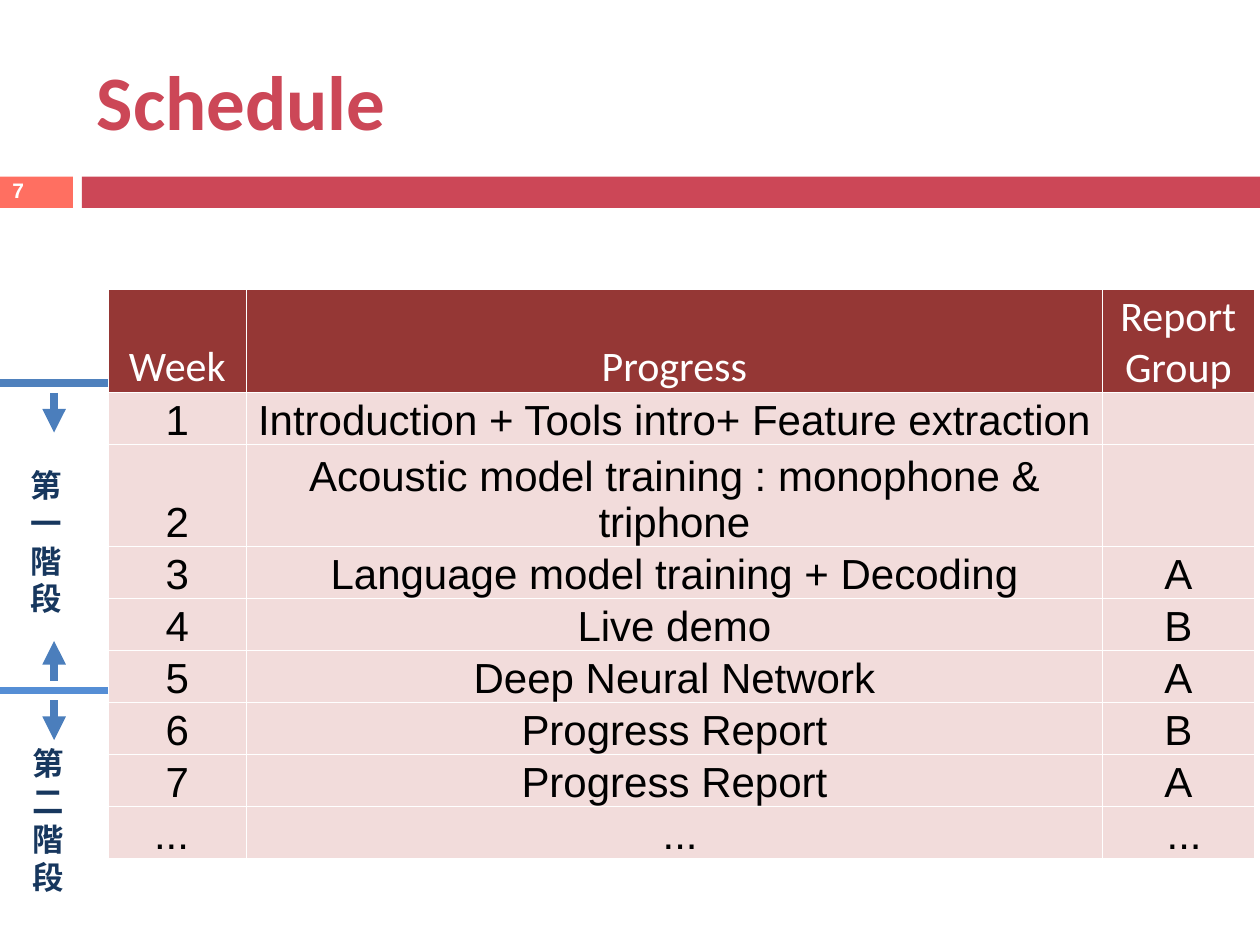
from lxml.etree import SubElement
from pptx import Presentation
from pptx.dml.color import RGBColor
from pptx.enum.shapes import MSO_CONNECTOR, MSO_SHAPE
from pptx.enum.text import MSO_ANCHOR, MSO_AUTO_SIZE, PP_ALIGN
from pptx.oxml.ns import qn
from pptx.util import Cm, Pt

SCHEDULE = [
    ("Week", "Progress", "Report\nGroup"),
    ("1", "Introduction + Tools intro+ Feature extraction", ""),
    ("2", "Acoustic model training : monophone & triphone", ""),
    ("3", "Language model training + Decoding", "A"),
    ("4", "Live demo", "B"),
    ("5", "Deep Neural Network", "A"),
    ("6", "Progress Report", "B"),
    ("7", "Progress Report", "A"),
    ("... ", " ...", " ..."),
]
COLUMN_WIDTHS = (2.79, 17.25, 3.07)
ROW_HEIGHT = 0.98
TALL_ROW_HEIGHTS = {0: 2.07, 2: 2 * ROW_HEIGHT}
TABLE_LEFT, TABLE_TOP = 2.18, 5.84
ARROW_X, ARROW_LENGTH, ARROW_GAP = 1.09, 0.8, 0.2
PHASE_ONE_START, PHASE_TWO_START = 7.72, 13.92


def rgb(hex_code):
    """Turn a hex string into a colour."""
    return RGBColor.from_string(hex_code)


def set_font(paragraph, name, size, color, bold=False):
    """Format all the text of a paragraph."""
    font = paragraph.font
    font.name, font.size, font.bold = name, Pt(size), bold
    font.color.rgb = rgb(color)


def add_bar(slide, left, width, color):
    """Add one part of the band under the title."""
    bar = slide.shapes.add_shape(
        MSO_SHAPE.RECTANGLE, Cm(left), Cm(3.56), Cm(width), Cm(0.63))
    bar.shadow.inherit = False
    bar.fill.solid()
    bar.fill.fore_color.rgb = rgb(color)
    bar.line.fill.background()


def add_title(slide, wording):
    """Place and format the title."""
    title = slide.shapes.title
    title.left, title.top, title.width, title.height = (
        Cm(1.7), Cm(0.64), Cm(22.66), Cm(2.74))
    title.text_frame.text = wording
    title.text_frame.vertical_anchor = MSO_ANCHOR.MIDDLE
    heading = title.text_frame.paragraphs[0]
    heading.alignment = PP_ALIGN.LEFT
    set_font(heading, "Calibri", 44, "CC4757", True)


def add_page_number(slide, number):
    """Add the page number on the short bar."""
    frame = slide.shapes.add_textbox(Cm(0), Cm(3.53), Cm(1.47), Cm(0.69)).text_frame
    frame.word_wrap = True
    frame.vertical_anchor = MSO_ANCHOR.MIDDLE
    frame.text = number
    frame.paragraphs[0].line_spacing = 0.8
    set_font(frame.paragraphs[0], "Arial", 12, "FFFFFF", True)


def add_borders(cell, color):
    """Draw a thin line on each side of a cell."""
    properties = cell._tc.get_or_add_tcPr()
    for index, side in enumerate(("a:lnL", "a:lnR", "a:lnT", "a:lnB")):
        border = properties.makeelement(qn(side), {"w": str(Pt(1))})
        fill = SubElement(border, qn("a:solidFill"))
        SubElement(fill, qn("a:srgbClr"), val=color)
        properties.insert(index, border)


def fill_cell(cell, wording, is_header):
    """Write and format one cell of the schedule."""
    cell.text = wording
    cell.vertical_anchor = MSO_ANCHOR.BOTTOM
    cell.margin_left = cell.margin_right = cell.margin_top = Cm(0.03)
    cell.margin_bottom = Cm(0)
    cell.fill.solid()
    cell.fill.fore_color.rgb = rgb("953735" if is_header else "F2DCDB")
    add_borders(cell, "FFFFFF")
    for paragraph in cell.text_frame.paragraphs:
        paragraph.alignment = PP_ALIGN.CENTER
        if is_header:
            set_font(paragraph, "Calibri", 24, "FFFFFF")
        else:
            set_font(paragraph, "Arial", 24, "000000")


def add_schedule(slide):
    """Add the table of weeks."""
    heights = [TALL_ROW_HEIGHTS.get(row, ROW_HEIGHT) for row in range(len(SCHEDULE))]
    schedule = slide.shapes.add_table(
        len(SCHEDULE), len(COLUMN_WIDTHS), Cm(TABLE_LEFT), Cm(TABLE_TOP),
        Cm(sum(COLUMN_WIDTHS)), Cm(sum(heights))).table
    for column, width in zip(schedule.columns, COLUMN_WIDTHS):
        column.width = Cm(width)
    for row_index, (week, height) in enumerate(zip(SCHEDULE, heights)):
        schedule.rows[row_index].height = Cm(height)
        for column_index, wording in enumerate(week):
            fill_cell(schedule.cell(row_index, column_index), wording, row_index == 0)


def add_line(slide, start, end, color, arrow=False):
    """Add a thick line, with an arrowhead at its end if asked."""
    line = slide.shapes.add_connector(
        MSO_CONNECTOR.STRAIGHT, *(Cm(value) for value in (*start, *end)))
    line.line.color.rgb = rgb(color)
    line.line.width = Pt(4.5)
    if arrow:
        SubElement(line.line._get_or_add_ln(), qn("a:tailEnd"), type="triangle")
    SubElement(line._element.spPr, qn("a:effectLst"))


def add_phase_arrow(slide, boundary, direction):
    """Add an arrow pointing away from a phase boundary, 1 down or -1 up."""
    start = boundary + direction * ARROW_GAP
    add_line(slide, (ARROW_X, start), (ARROW_X, start + direction * ARROW_LENGTH),
             "4B7EBC", True)


def add_phase_label(slide, left, top, wording):
    """Add the stacked name of a phase."""
    frame = slide.shapes.add_textbox(Cm(left), Cm(top), Cm(1.35), Cm(3.25)).text_frame
    frame.word_wrap = False
    frame.auto_size = MSO_AUTO_SIZE.SHAPE_TO_FIT_TEXT
    frame._txBody.bodyPr.set("vert", "wordArtVert")
    frame.text = wording
    set_font(frame.paragraphs[0], "Arial", 18, "17375E", True)


def main():
    """Build the schedule slide."""
    deck = Presentation()
    deck.slide_width, deck.slide_height = Cm(25.4), Cm(19.05)
    slide = deck.slides.add_slide(deck.slide_layouts[5])
    add_bar(slide, 0, 1.47, "FF6F61")
    add_bar(slide, 1.65, 23.75, "CC4757")
    add_page_number(slide, "7")
    add_title(slide, "Schedule")
    add_schedule(slide)
    for boundary, color in ((PHASE_ONE_START, "4F81BD"), (PHASE_TWO_START, "558ED5")):
        add_line(slide, (TABLE_LEFT, boundary), (0, boundary), color)
        add_phase_arrow(slide, boundary, 1)
    add_phase_arrow(slide, PHASE_TWO_START, -1)
    add_phase_label(slide, 0.36, 9.27, "第一階段")
    add_phase_label(slide, 0.41, 14.88, "第二階段")
    deck.save("out.pptx")


if __name__ == "__main__":
    main()
